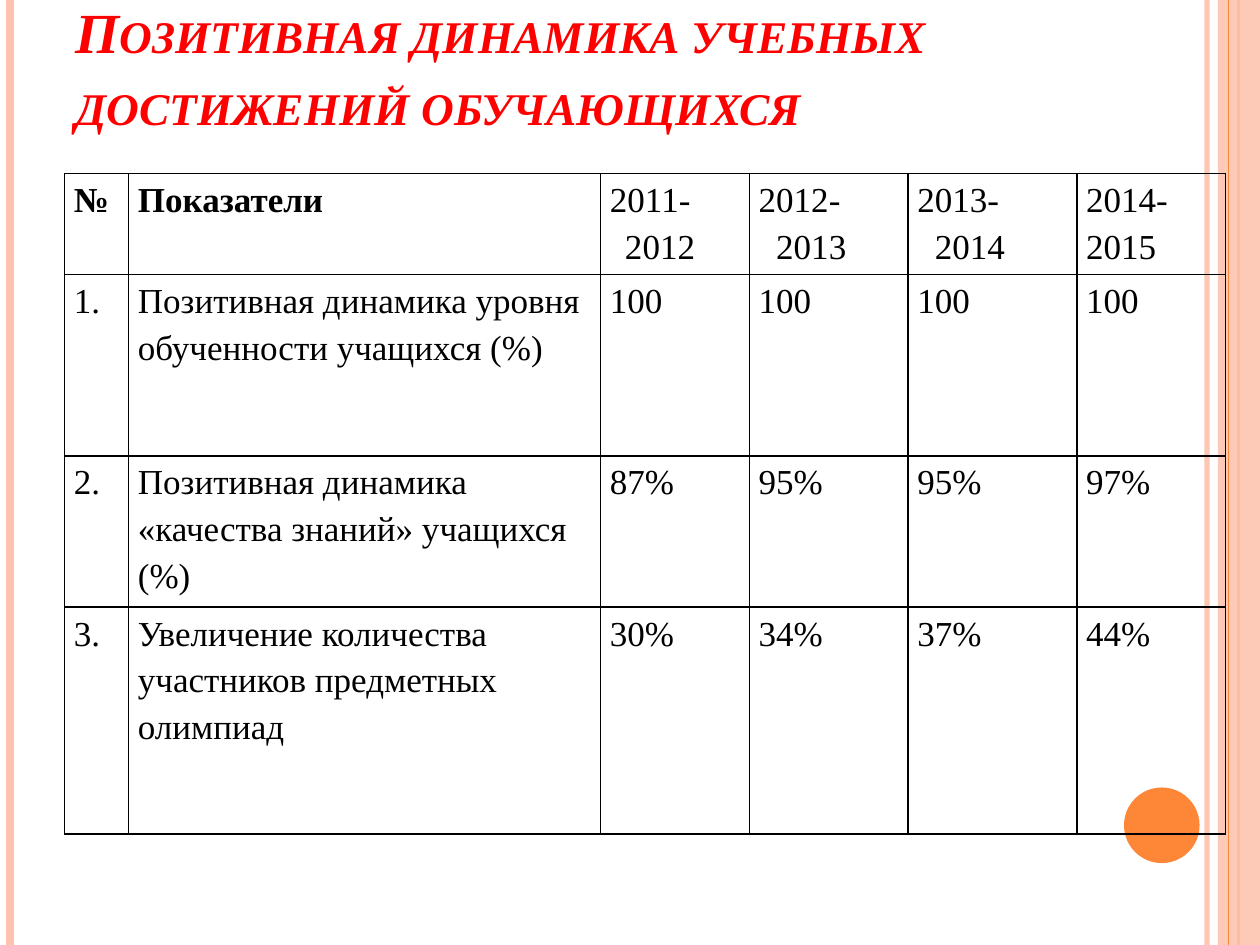
from typing import NamedTuple

from pptx import Presentation
from pptx.dml.color import RGBColor
from pptx.enum import shapes, text
from pptx.oxml import parse_xml
from pptx.oxml.ns import nsdecls, qn
from pptx.util import Pt

FONT = "Times New Roman"
PINK, ORANGE, BLACK, RED = "FEC3AE", "FE8637", "000000", "FF0000"
SLIDE_W, SLIDE_H = 720, 540


class Stripe(NamedTuple):
    x: float
    color: str
    width: float
    opacity: int = 100


class Block(NamedTuple):
    kind: shapes.MSO_SHAPE
    x: float
    y: float
    w: float
    h: float
    color: str
    opacity: int = 100


class Column(NamedTuple):
    width: float
    header: str
    bold: bool = False
    margin: float = 0
    indent: float = 0


class Row(NamedTuple):
    height: float
    values: tuple[str, ...]


DECOR = [
    Stripe(689.8, PINK, 3, 93),
    Stripe(5.8, PINK, 4.5),
    Stripe(707.8, ORANGE, 1.5),
    Block(shapes.MSO_SHAPE.RECTANGLE, 696, 0, 24, SLIDE_H, PINK, 87),
    Stripe(702, ORANGE, 0.75),
    Block(shapes.MSO_SHAPE.OVAL, 642.3, 450, 43.2, 43.2, ORANGE),
]
COLUMNS = [
    Column(36.6, "№", bold=True),
    Column(269.8, "Показатели", bold=True),
    Column(85, "2011-2012", margin=8.6, indent=-11.5),
    Column(90.7, "2012-2013", margin=10, indent=-10),
    Column(96.4, "2013-2014", margin=10, indent=-10),
    Column(85, "2014-2015"),
]
HEADER_H = 52
ROWS = [
    Row(103.7, ("1.", "Позитивная динамика уровня обученности учащихся (%)",
                "100", "100", "100", "100")),
    Row(77.8, ("2.", "Позитивная динамика «качества знаний» учащихся (%)",
               "87%", "95%", "95%", "97%")),
    Row(129.6, ("3.", "Увеличение количества участников предметных олимпиад",
                "30%", "34%", "37%", "44%")),
]


def rgb(color: str) -> RGBColor:
    return RGBColor.from_string(color)


def set_opacity(fill, percent: int) -> None:
    """Add an alpha value to the solid colour found below the element."""
    if percent < 100:
        clr = fill.find(".//" + qn("a:srgbClr"))
        clr.append(parse_xml(f'<a:alpha {nsdecls("a")} val="{percent * 1000}"/>'))


def draw_stripe(s, stripe: Stripe) -> None:
    x = Pt(stripe.x)
    line = s.shapes.add_connector(shapes.MSO_CONNECTOR.STRAIGHT, x, 0, x, Pt(SLIDE_H))
    line.line.color.rgb = rgb(stripe.color)
    line.line.width = Pt(stripe.width)
    sp_pr = line._element.spPr
    set_opacity(sp_pr, stripe.opacity)
    sp_pr.append(parse_xml(f'<a:effectLst {nsdecls("a")}/>'))


def draw_block(s, block: Block) -> None:
    sp = s.shapes.add_shape(block.kind, Pt(block.x), Pt(block.y), Pt(block.w), Pt(block.h))
    sp.shadow.inherit = False
    sp.fill.solid()
    sp.fill.fore_color.rgb = rgb(block.color)
    sp.line.fill.background()
    set_opacity(sp._element.spPr, block.opacity)


def style_run(r, size: float, color: str, bold: bool) -> None:
    r.font.name = FONT
    r.font.size = Pt(size)
    r.font.color.rgb = rgb(color)
    r.font.bold = bold


def draw_title(s, title: str) -> None:
    sp = s.shapes.add_textbox(Pt(36), Pt(21.6), Pt(588), Pt(90))
    tf = sp.text_frame
    tf.word_wrap = True
    tf.vertical_anchor = text.MSO_ANCHOR.BOTTOM
    tf.margin_top, tf.margin_bottom = 0, Pt(33.6)
    tf.text = title
    p = tf.paragraphs[0]
    p.line_spacing = 1.05
    r = p.runs[0]
    style_run(r, 32.4, RED, True)
    r.font.italic = True
    r._r.get_or_add_rPr().set("cap", "small")


def fill_cell(cell, value: str, bold: bool = False, margin: float = 0,
              indent: float = 0, after: float = 0) -> None:
    cell.fill.background()
    cell.margin_left = cell.margin_right = Pt(5.3)
    cell.margin_top = cell.margin_bottom = 0
    cell.text = value
    p = cell.text_frame.paragraphs[0]
    p.line_spacing = 1.2
    p.space_after = Pt(after)
    if indent:
        p_pr = p._p.get_or_add_pPr()
        p_pr.set("marL", str(Pt(margin)))
        p_pr.set("indent", str(Pt(indent)))
    style_run(p.runs[0], 20, BLACK, bold)
    # Borders come before the fill in the cell properties
    tc_pr = cell._tc.get_or_add_tcPr()
    for i, side in enumerate(("lnL", "lnR", "lnT", "lnB")):
        tc_pr.insert(i, parse_xml(
            f'<a:{side} {nsdecls("a")} w="{Pt(1)}"><a:solidFill>'
            f'<a:srgbClr val="{BLACK}"/></a:solidFill></a:{side}>'))


def draw_table(s) -> None:
    heights = [HEADER_H] + [row.height for row in ROWS]
    frame = s.shapes.add_table(len(heights), len(COLUMNS), Pt(36.9), Pt(99.2),
                               Pt(sum(c.width for c in COLUMNS)), Pt(sum(heights)))
    table = frame.table
    table.horz_banding = table.first_row = False
    for row, height in zip(table.rows, heights):
        row.height = Pt(height)
    for j, col in enumerate(COLUMNS):
        table.columns[j].width = Pt(col.width)
        fill_cell(table.cell(0, j), col.header, col.bold, col.margin, col.indent)
        for i, row in enumerate(ROWS, 1):
            fill_cell(table.cell(i, j), row.values[j], after=10 if j or i > 1 else 0)


def main() -> None:
    prs = Presentation()
    prs.slide_width, prs.slide_height = Pt(SLIDE_W), Pt(SLIDE_H)
    s = prs.slides.add_slide(prs.slide_layouts[6])

    # Side stripes and circle
    for item in DECOR:
        if isinstance(item, Stripe):
            draw_stripe(s, item)
        else:
            draw_block(s, item)

    # Title and results
    draw_title(s, "Позитивная динамика учебных достижений обучающихся")
    draw_table(s)
    prs.save("out.pptx")


if __name__ == "__main__":
    main()
